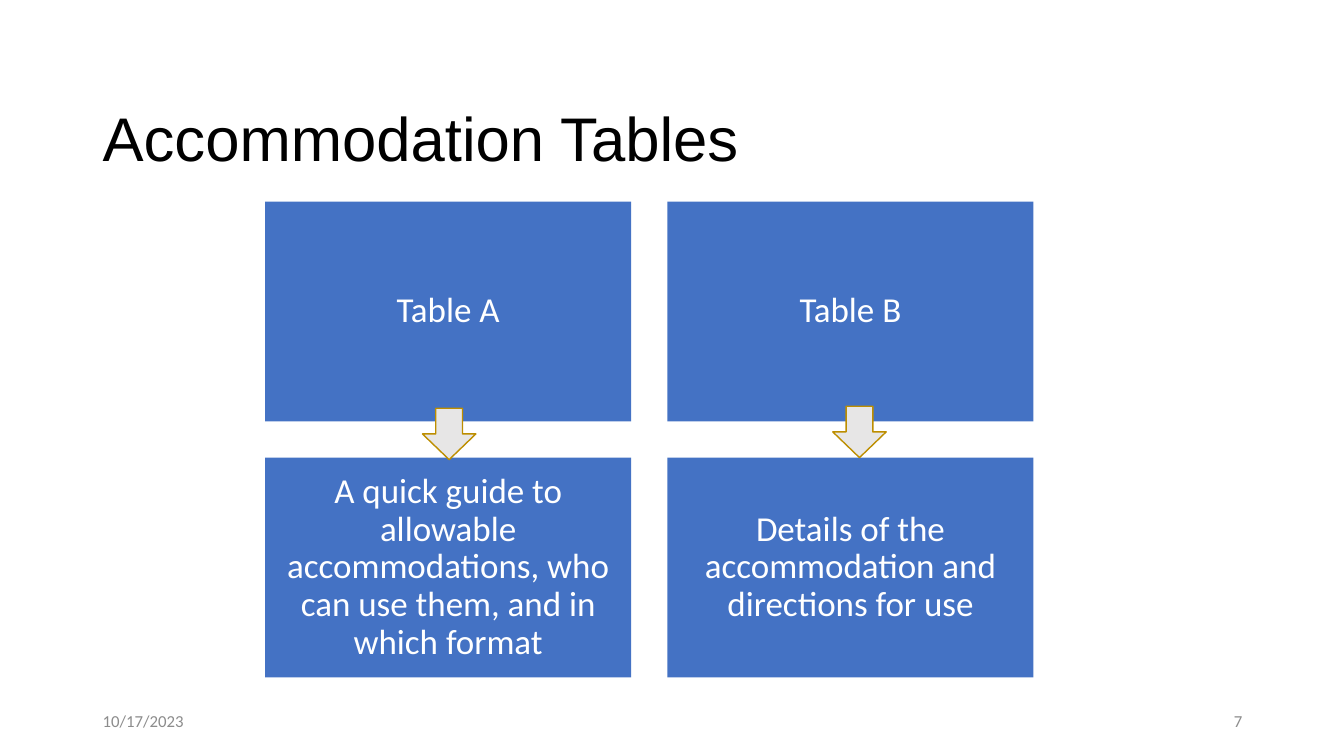
from dataclasses import dataclass

import pptx
import pptx.dml.color
import pptx.enum.shapes
import pptx.enum.text
import pptx.shapes.autoshape
import pptx.slide
import pptx.util

RGBColor = pptx.dml.color.RGBColor
Align = pptx.enum.text.PP_ALIGN
Preset = pptx.enum.shapes.MSO_SHAPE

EMU_PER_PX = 9144  # 100 px to the inch

BLACK = RGBColor(0x00, 0x00, 0x00)
WHITE = RGBColor(0xFF, 0xFF, 0xFF)
GREY = RGBColor(0x8C, 0x8C, 0x8C)
BLUE = RGBColor(0x44, 0x72, 0xC4)
ARROW_FILL = RGBColor(0xE7, 0xE6, 0xE6)
ARROW_LINE = RGBColor(0xBD, 0x8E, 0x00)

CARD_LEFT, CARD_TOP = 263, 200
CARD_WIDTH, CARD_HEIGHT = 363, 218
CARD_GAP = 36
ARROW_WIDTH, ARROW_HEIGHT = 53, 51


@dataclass(frozen=True)
class Area:
    left: int
    top: int
    width: int
    height: int

    def emu(self) -> tuple[int, int, int, int]:
        return (self.left * EMU_PER_PX, self.top * EMU_PER_PX,
                self.width * EMU_PER_PX, self.height * EMU_PER_PX)


@dataclass(frozen=True)
class AccommodationTable:
    name: str
    purpose: str
    arrow_left: int
    arrow_top: int


TABLES = [
    AccommodationTable(
        "Table A",
        "A quick guide to allowable accommodations, who can use them, and in which format",
        419, 405),
    AccommodationTable(
        "Table B", "Details of the accommodation and directions for use", 826, 403),
]


def write_text(box: pptx.shapes.autoshape.Shape, text: str, *, size: int,
               color: RGBColor, font: str = "Calibri", align: Align = Align.LEFT,
               line_spacing: float = 1.0, inset_y: int = 5) -> None:
    frame = box.text_frame
    frame.word_wrap = True
    frame.vertical_anchor = pptx.enum.text.MSO_ANCHOR.MIDDLE
    frame.margin_left = frame.margin_right = 10 * EMU_PER_PX
    frame.margin_top = frame.margin_bottom = inset_y * EMU_PER_PX
    para = frame.paragraphs[0]
    para.alignment = align
    para.line_spacing = line_spacing
    span = para.add_run()
    span.text = text
    span.font.name = font
    span.font.size = pptx.util.Pt(size)
    span.font.color.rgb = color


def add_filled_shape(page: pptx.slide.Slide, preset: Preset, area: Area,
                     fill: RGBColor) -> pptx.shapes.autoshape.Shape:
    shape = page.shapes.add_shape(preset, *area.emu())
    shape.shadow.inherit = False
    shape.fill.solid()
    shape.fill.fore_color.rgb = fill
    shape.line.fill.background()
    return shape


def add_card(page: pptx.slide.Slide, column: int, row: int, text: str) -> None:
    area = Area(CARD_LEFT + column * (CARD_WIDTH + CARD_GAP),
                CARD_TOP + row * (CARD_HEIGHT + CARD_GAP),
                CARD_WIDTH, CARD_HEIGHT)
    card = add_filled_shape(page, Preset.RECTANGLE, area, BLUE)
    write_text(card, text, size=25, color=WHITE, align=Align.CENTER,
               line_spacing=0.9, inset_y=10)


def add_arrow(page: pptx.slide.Slide, left: int, top: int) -> None:
    area = Area(left, top, ARROW_WIDTH, ARROW_HEIGHT)
    arrow = add_filled_shape(page, Preset.DOWN_ARROW, area, ARROW_FILL)
    arrow.line.color.rgb = ARROW_LINE
    arrow.line.width = pptx.util.Pt(1)


def main() -> None:
    deck = pptx.Presentation()
    deck.slide_width = 1333 * EMU_PER_PX
    deck.slide_height = 750 * EMU_PER_PX
    page = deck.slides.add_slide(deck.slide_layouts[6])

    title = page.shapes.add_textbox(*Area(92, 68, 1150, 145).emu())
    write_text(title, "Accommodation Tables", size=44, color=BLACK,
               font="Arial", line_spacing=0.9)
    date = page.shapes.add_textbox(*Area(92, 695, 300, 40).emu())
    write_text(date, "10/17/2023", size=12, color=GREY)
    number = page.shapes.add_textbox(*Area(942, 695, 300, 40).emu())
    write_text(number, "7", size=12, color=GREY, align=Align.RIGHT)

    for column, table in enumerate(TABLES):
        for row, text in enumerate((table.name, table.purpose)):
            add_card(page, column, row, text)
        add_arrow(page, table.arrow_left, table.arrow_top)

    deck.save("out.pptx")


if __name__ == "__main__":
    main()
